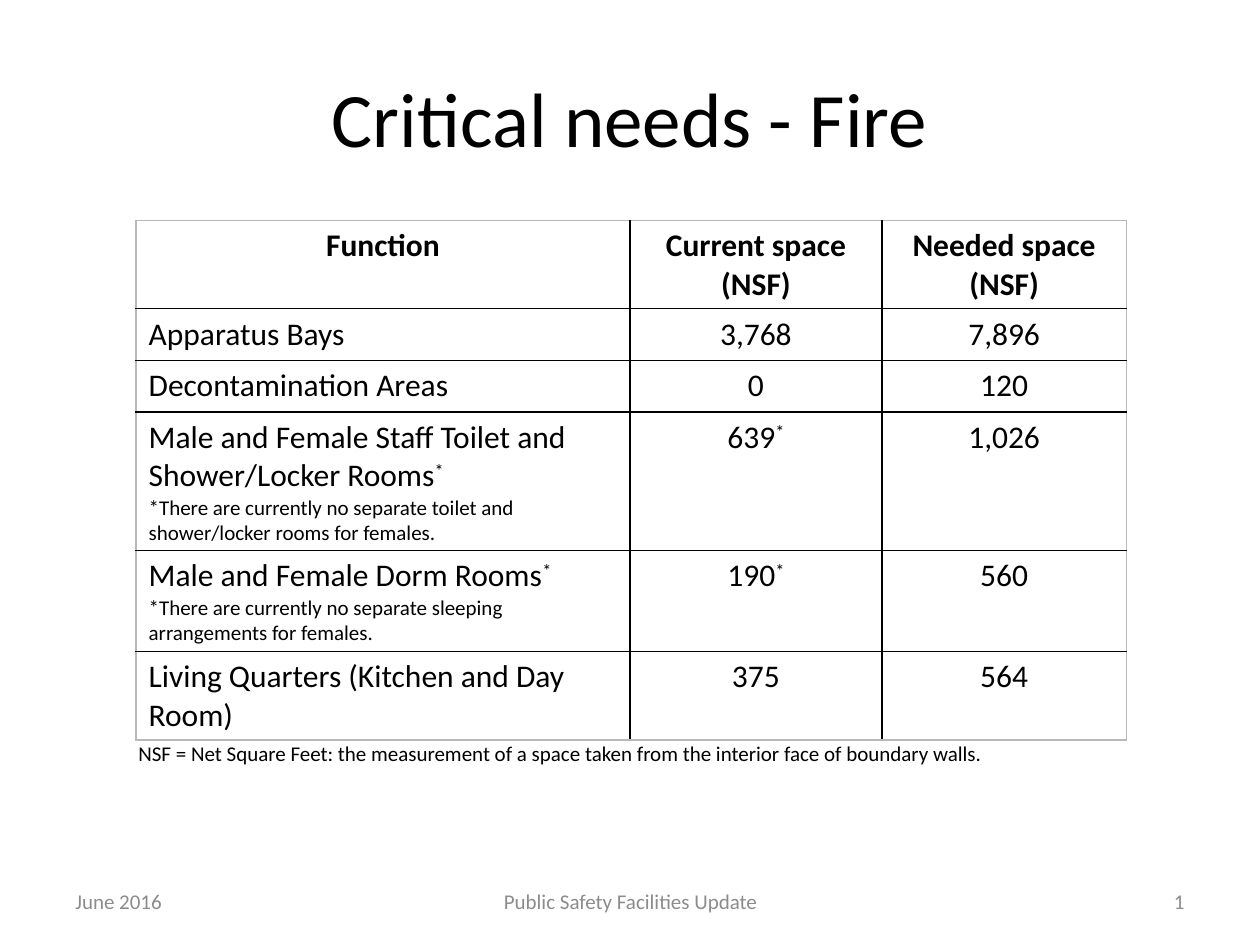
from lxml import etree
from pptx import Presentation, util as u
from pptx.dml.color import RGBColor
from pptx.enum import text
from pptx.oxml import ns

PX = 9144
FONT = "Calibri"
BLACK, GREY, EDGE = "000000", "8C8C8C", "B8B8B8"
LEFT, CENTER, RIGHT = text.PP_ALIGN.LEFT, text.PP_ALIGN.CENTER, text.PP_ALIGN.RIGHT
TOP, MIDDLE = text.MSO_ANCHOR.TOP, text.MSO_ANCHOR.MIDDLE

COLUMNS = [392, 200, 194]
ROW_HEIGHT = 41
NEEDS = [
    ("Function", "Current space (NSF)", "Needed space\n(NSF)"),
    ("Apparatus Bays", "3,768", "7,896"),
    ("Decontamination Areas", "0", "120"),
    ("Male and Female Staff Toilet and Shower/Locker Rooms*\n"
     "*There are currently no separate toilet and shower/locker rooms for females.",
     "639*", "1,026"),
    ("Male and Female Dorm Rooms*\n"
     "*There are currently no separate sleeping arrangements for females.",
     "190*", "560"),
    ("Living Quarters (Kitchen and Day Room)", "375", "564"),
]


def px(*lengths):
    return [u.Emu(length * PX) for length in lengths]


def color(value):
    return RGBColor.from_string(value)


def style(para, size, fill, align, bold=False):
    para.alignment = align
    font = para.font
    font.name, font.size, font.bold = FONT, u.Pt(size), bold
    font.color.rgb = color(fill)


def add_text(page, place, words, size, fill=BLACK, align=LEFT, anchor=MIDDLE):
    box = page.shapes.add_textbox(*px(*place))
    frame = box.text_frame
    frame.word_wrap = True
    frame.vertical_anchor = anchor
    frame.text = words
    style(frame.paragraphs[0], size, fill, align)
    return box


def set_borders(cell, sides):
    properties = cell._tc.get_or_add_tcPr()
    for position, (side, fill) in enumerate(sides.items()):
        line = etree.Element(ns.qn(f"a:ln{side}"), w=str(u.Pt(1)))
        solid = etree.SubElement(line, ns.qn("a:solidFill"))
        etree.SubElement(solid, ns.qn("a:srgbClr"), val=fill)
        properties.insert(position, line)


def fill_cell(cell, words, align, bold):
    cell.fill.background()
    frame = cell.text_frame
    for index, line in enumerate(words.split("\n")):
        para = frame.paragraphs[0] if index == 0 else frame.add_paragraph()
        style(para, 12 if line.startswith("*") else 18, BLACK, align, bold)
        para.add_run().text = line.removesuffix("*")
        if line.endswith("*"):
            mark = para.add_run()
            mark.text = "*"
            mark._r.get_or_add_rPr().set("baseline", "30000")


def add_needs_table(page, left, top):
    last_row, last_column = len(NEEDS) - 1, len(COLUMNS) - 1
    place = px(left, top, sum(COLUMNS), 411)
    table = page.shapes.add_table(len(NEEDS), len(COLUMNS), *place).table
    table.first_row = table.horz_banding = False
    for column, width in zip(table.columns, COLUMNS):
        column.width = px(width)[0]
    for r, entries in enumerate(NEEDS):
        table.rows[r].height = px(ROW_HEIGHT)[0]
        for c, words in enumerate(entries):
            cell = table.cell(r, c)
            fill_cell(cell, words, LEFT if r and c == 0 else CENTER, r == 0)
            outer = {"L": c == 0, "R": c == last_column, "T": r == 0, "B": r == last_row}
            set_borders(cell, {side: EDGE if edge else BLACK for side, edge in outer.items()})


def add_footer(page):
    for left, width, words, align in [
        (50, 233, "June 2016", LEFT),
        (342, 317, "Public Safety Facilities Update", CENTER),
        (717, 233, "1", RIGHT),
    ]:
        add_text(page, (left, 695, width, 40), words, 12, GREY, align)


def main():
    deck = Presentation()
    deck.slide_width, deck.slide_height = px(1000, 750)
    page = deck.slides.add_slide(deck.slide_layouts[6])
    add_text(page, (50, 30, 900, 125), "Critical needs - Fire", 44, align=CENTER)
    add_needs_table(page, 108, 175)
    add_footer(page)
    note = add_text(
        page, (100, 583, 767, 30),
        "NSF = Net Square Feet: the measurement of a space taken from the "
        "interior face of boundary walls.", 12, anchor=TOP)
    note.text_frame.auto_size = text.MSO_AUTO_SIZE.SHAPE_TO_FIT_TEXT
    deck.save("out.pptx")


if __name__ == "__main__":
    main()
